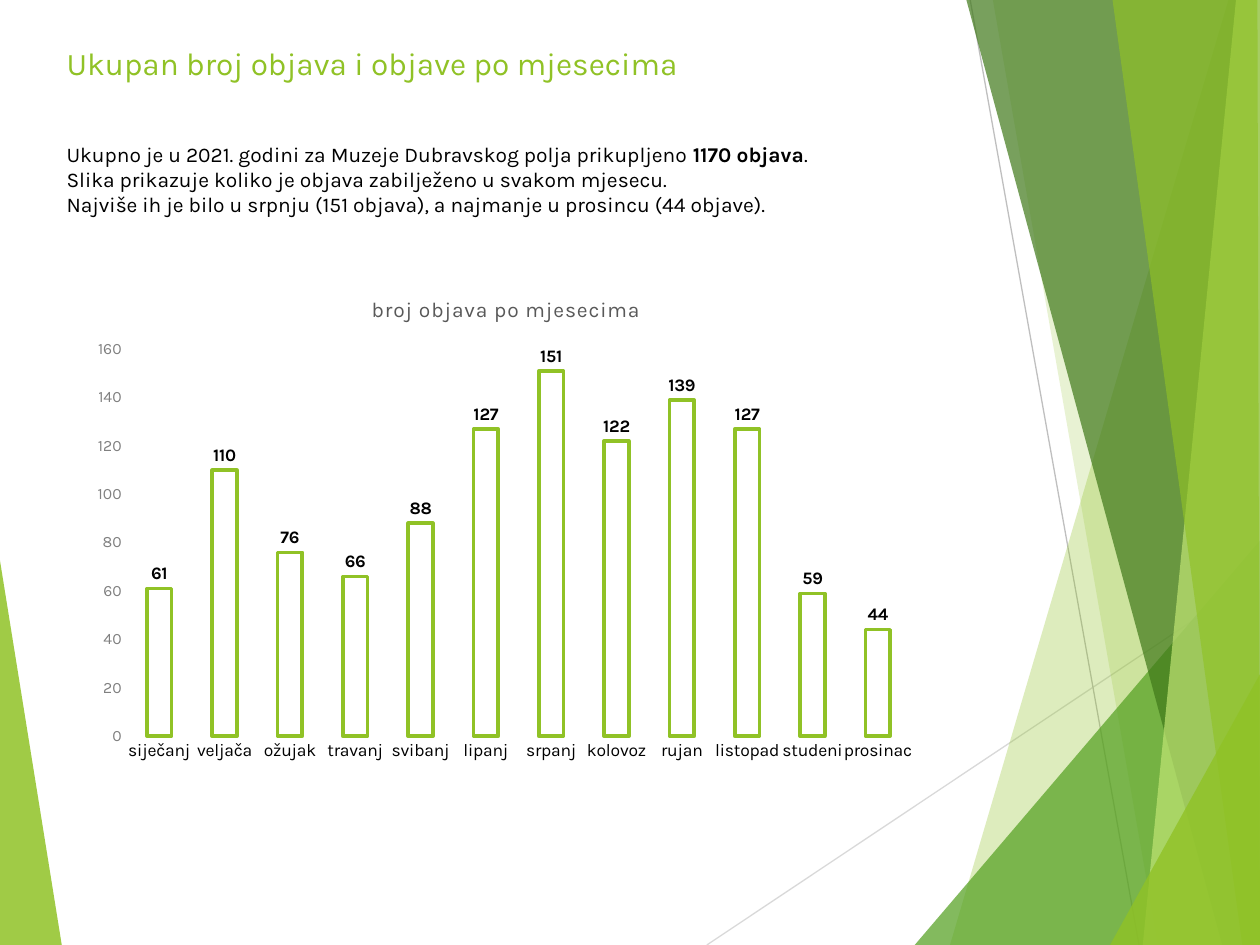
from dataclasses import dataclass

from lxml.etree import SubElement
from pptx import Presentation
from pptx.chart.data import CategoryChartData
from pptx.dml.color import RGBColor
from pptx.enum.chart import XL_CHART_TYPE as ChartType
from pptx.enum.chart import XL_LABEL_POSITION as LabelPosition
from pptx.enum.chart import XL_TICK_MARK as TickMark
from pptx.enum.shapes import MSO_CONNECTOR as Connector
from pptx.enum.text import MSO_ANCHOR as Anchor
from pptx.enum.text import PP_ALIGN as Align
from pptx.oxml import parse_xml
from pptx.oxml.ns import nsdecls, qn
from pptx.util import Inches, Pt


@dataclass(frozen=True)
class Theme:
    font: str = "Karla"
    lime: str = "90C226"
    green: str = "54A021"
    forest: str = "3F7819"
    pale: str = "C0E474"
    black: str = "000000"
    gray: str = "808080"
    dark_gray: str = "595959"
    light_gray: str = "D9D9D9"
    silver: str = "BFBFBF"
    title_size: int = 18
    body_size: int = 12
    label_size: int = 10
    scale_size: int = 9


@dataclass(frozen=True)
class Facet:
    points: tuple[tuple[float, float], ...]
    color: str
    opacity: int


@dataclass(frozen=True)
class Ray:
    start: tuple[float, float]
    end: tuple[float, float]
    color: str


THEME = Theme()
LEFT_FACET = Facet(((0, 4.45), (0.49, 7.5), (0, 7.5)), THEME.lime, 85)
RAYS = (
    Ray((5.61, 7.5), (10, 4.57), THEME.light_gray),
    Ray((7.7, 0), (9.04, 7.5), THEME.silver),
)
RIGHT_FACETS = (
    Facet(((9.75, 0), (7.54, 7.5), (10, 7.5), (10, 0)), THEME.lime, 30),
    Facet(((7.88, 0), (9.19, 7.5), (10, 7.5), (10, 0)), THEME.lime, 20),
    Facet(((7.26, 7.5), (10, 4.29), (10, 7.5)), THEME.green, 72),
    Facet(((7.67, 0), (9.7, 7.5), (10, 7.5), (10, 0)), THEME.forest, 70),
    Facet(((9.81, 0), (9.07, 7.5), (10, 7.5), (10, 0)), THEME.pale, 70),
    Facet(((8.83, 0), (9.86, 7.5), (10, 7.5), (9.98, 0)), THEME.lime, 65),
    Facet(((8.81, 7.5), (10, 5.35), (10, 7.5)), THEME.lime, 80),
)
BODY = (
    (
        ("Ukupno je u 2021. godini za Muzeje Dubravskog polja prikupljeno ", False),
        ("1170 objava", True),
        (".", False),
    ),
    (("Slika prikazuje koliko je objava zabilježeno u svakom mjesecu.", False),),
    (("Najviše ih je bilo u srpnju (151 objava), a najmanje u prosincu (44 objave).", False),),
)
MONTHLY_POSTS = {
    "siječanj": 61, "veljača": 110, "ožujak": 76, "travanj": 66,
    "svibanj": 88, "lipanj": 127, "srpanj": 151, "kolovoz": 122,
    "rujan": 139, "listopad": 127, "studeni": 59, "prosinac": 44,
}
PLOT_AREA = {"x": 0.05, "y": 0.15, "w": 0.93, "h": 0.78}


def format_font(font, *, size: float, color: str, bold: bool = False) -> None:
    font.name = THEME.font
    font.size = Pt(size)
    font.bold = bold
    font.color.rgb = RGBColor.from_string(color)


def add_text(paragraph, text: str, **font_format):
    run = paragraph.add_run()
    run.text = text
    format_font(run.font, **font_format)
    return run


def draw_facet(slide, facet: Facet) -> None:
    points = [(Inches(x), Inches(y)) for x, y in facet.points]
    builder = slide.shapes.build_freeform(*points[0])
    builder.add_line_segments(points[1:], close=True)
    shape = builder.convert_to_shape()
    shape.shadow.inherit = False
    shape.line.fill.background()
    shape.fill.solid()
    shape.fill.fore_color.rgb = RGBColor.from_string(facet.color)
    color = shape._element.spPr.find(qn("a:solidFill"))[0]
    SubElement(color, qn("a:alpha"), val=str(facet.opacity * 1000))


def draw_ray(slide, ray: Ray) -> None:
    ends = [Inches(value) for value in ray.start + ray.end]
    line = slide.shapes.add_connector(Connector.STRAIGHT, *ends)
    line.line.color.rgb = RGBColor.from_string(ray.color)
    line.line.width = Pt(0.75)
    SubElement(line._element.spPr, qn("a:effectLst"))


def draw_title(slide) -> None:
    title = slide.shapes.title
    title.left, title.top = Inches(0.2), Inches(0.3)
    title.width, title.height = Inches(5.51), Inches(0.47)
    frame = title.text_frame
    frame.vertical_anchor = Anchor.TOP
    frame.word_wrap = True
    paragraph = frame.paragraphs[0]
    paragraph.alignment = Align.CENTER
    add_text(paragraph, "Ukupan broj objava i objave po mjesecima",
             size=THEME.title_size, color=THEME.lime)


def draw_body(slide) -> None:
    box = slide.shapes.add_textbox(Inches(0.43), Inches(1.07), Inches(6.26), Inches(0.71))
    frame = box.text_frame
    frame.word_wrap = False
    for index, runs in enumerate(BODY):
        paragraph = frame.add_paragraph() if index else frame.paragraphs[0]
        paragraph.alignment = Align.LEFT
        for text, bold in runs:
            add_text(paragraph, text, size=THEME.body_size, color=THEME.black, bold=bold)


def format_axis(axis, size: int, color: str) -> None:
    axis.has_major_gridlines = False
    axis.major_tick_mark = axis.minor_tick_mark = TickMark.NONE
    axis.format.line.fill.background()
    format_font(axis.tick_labels.font, size=size, color=color)


def place_plot_area(chart) -> None:
    plot_area = chart._chartSpace.chart.plotArea
    for layout in plot_area.findall(qn("c:layout")):
        plot_area.remove(layout)
    sizes = "".join(f'<c:{key} val="{value}"/>' for key, value in PLOT_AREA.items())
    plot_area.insert(0, parse_xml(
        f'<c:layout {nsdecls("c")}><c:manualLayout><c:layoutTarget val="inner"/>'
        f'<c:xMode val="edge"/><c:yMode val="edge"/>{sizes}</c:manualLayout></c:layout>'))


def draw_chart(slide) -> None:
    data = CategoryChartData()
    data.categories = list(MONTHLY_POSTS)
    data.add_series("Series 1", list(MONTHLY_POSTS.values()))
    chart = slide.shapes.add_chart(
        ChartType.COLUMN_CLUSTERED, Inches(0.67), Inches(2.18), Inches(6.69), Inches(3.94), data).chart
    format_font(chart.font, size=THEME.label_size, color=THEME.black)
    chart.has_legend = False
    run = add_text(chart.chart_title.text_frame.paragraphs[0], "broj objava po mjesecima",
                   size=THEME.body_size, color=THEME.dark_gray)
    run.font._element.set("spc", "50")
    chart.chart_title.include_in_layout = False
    format_axis(chart.category_axis, THEME.label_size, THEME.black)
    format_axis(chart.value_axis, THEME.scale_size, THEME.gray)
    chart.value_axis.minimum_scale, chart.value_axis.maximum_scale = 0, 160
    chart.value_axis.major_unit = 20
    plot = chart.plots[0]
    plot.gap_width, plot.overlap = 164, -35
    plot.vary_by_categories = False
    series = plot.series[0]
    series.format.fill.background()
    series.format.line.color.rgb = RGBColor.from_string(THEME.lime)
    series.format.line.width = Pt(2)
    labels = series.data_labels
    labels.show_value = True
    labels.position = LabelPosition.OUTSIDE_END
    format_font(labels.font, size=THEME.label_size, color=THEME.black, bold=True)
    place_plot_area(chart)


def main() -> None:
    presentation = Presentation()
    presentation.slide_width, presentation.slide_height = Inches(10), Inches(7.5)
    slide = presentation.slides.add_slide(presentation.slide_layouts[5])
    draw_facet(slide, LEFT_FACET)
    for ray in RAYS:
        draw_ray(slide, ray)
    for facet in RIGHT_FACETS:
        draw_facet(slide, facet)
    draw_title(slide)
    draw_chart(slide)
    draw_body(slide)
    presentation.save("out.pptx")


if __name__ == "__main__":
    main()
